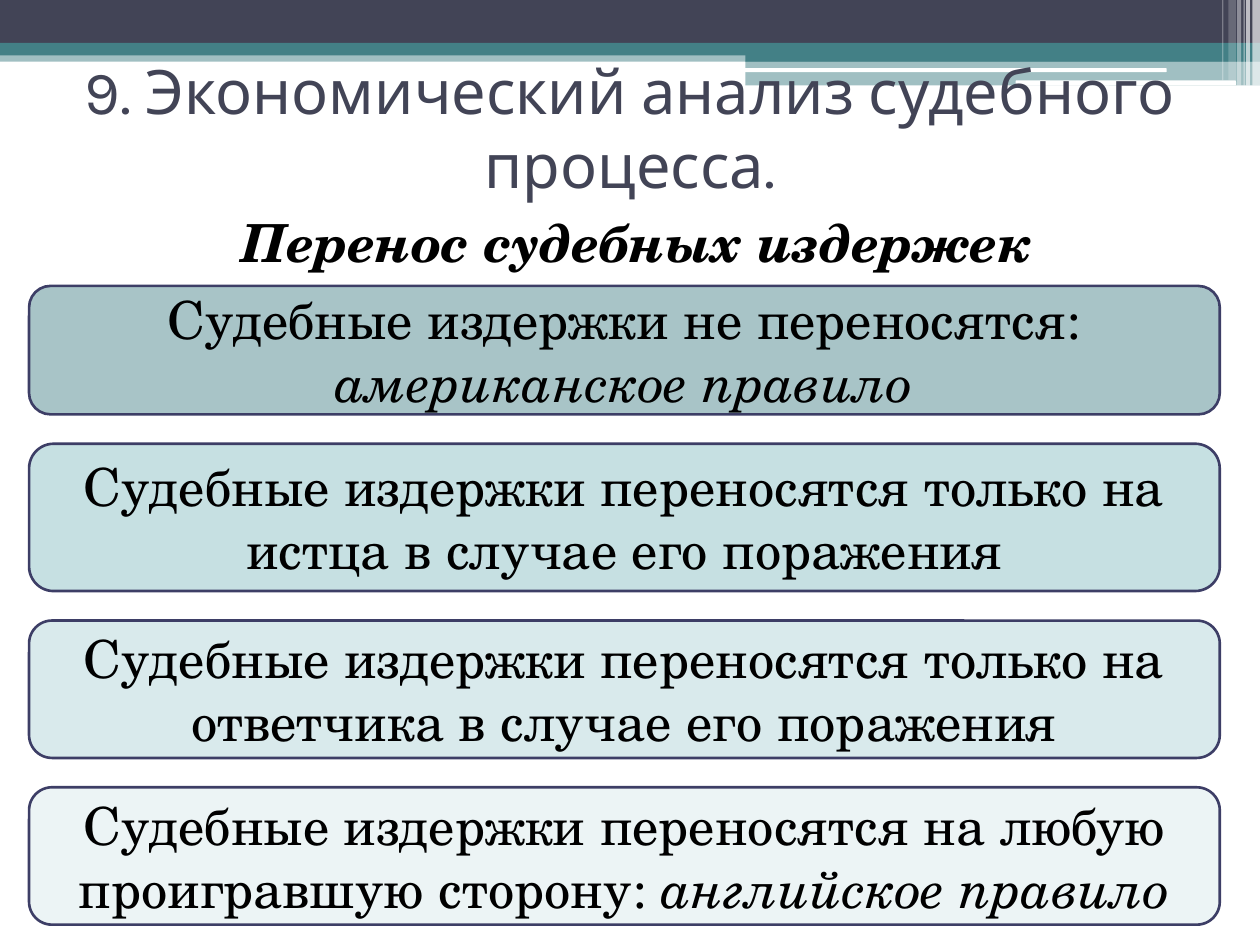
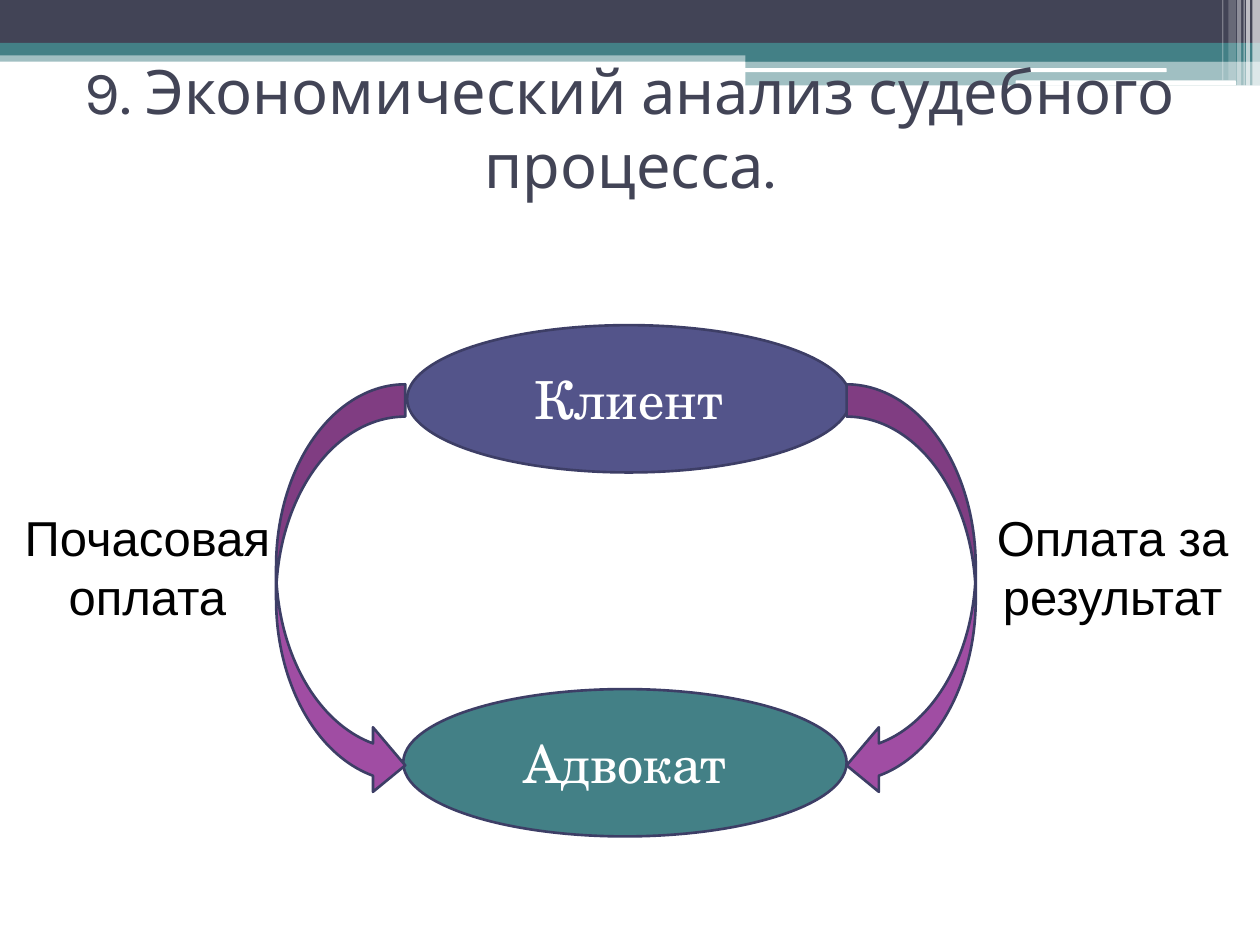
"""Builds two slides on the economic analysis of court proceedings."""
import lxml.etree
import pptx
import pptx.dml.color
import pptx.enum.shapes
import pptx.enum.text
import pptx.oxml.ns
import pptx.util

Pt = pptx.util.Pt
Shape = pptx.enum.shapes.MSO_SHAPE
Anchor = pptx.enum.text.MSO_ANCHOR

WIDTH, HEIGHT = 720, 540
SLATE, TEAL, INDIGO, PURPLE = "424456", "438086", "53548A", "A04DA3"
OUTLINE, WHITE, BLACK = "3D3E66", "FFFFFF", "000000"
SERIF, TITLE_FONT, LABEL_FONT = "TeX Gyre Schola", "Karla", "Arial"

TITLE = "9. Экономический анализ судебного процесса."
SUBTITLE = "Перенос судебных издержек"

BANDS = [
    (Shape.RECTANGLE, 0, 28.8, WIDTH, 6.5, TEAL, 50),
    (Shape.RECTANGLE, 0, 0, WIDTH, 24.5, SLATE, 100),
    (Shape.RECTANGLE, 0, 24.5, WIDTH, 7.2, TEAL, 100),
    (Shape.RECTANGLE, 426, 28, 294, 7.2, TEAL, 100),
    (Shape.RECTANGLE, 426, 34.6, 294, 14.2, TEAL, 50),
    (Shape.ROUNDED_RECTANGLE, 425.5, 39, 241.2, 2.2, WHITE, 100),
    (Shape.ROUNDED_RECTANGLE, 580.3, 46, 126, 2.9, WHITE, 100),
]
STRIPES = [
    (715.7, 4.3, 49, 65),
    (712.1, 2.2, 49, 65),
    (710.6, 0.7, 49, 60),
    (707, 2.2, 49, 40),
    (702, 4.3, 46, 20),
    (698.4, 0.7, 46, 30),
]

RULES = [
    (73.4, TEAL, "Судебные издержки не переносятся: ", "американское правило"),
    (84.2, "83BCC1", "Судебные издержки переносятся только на истца в случае его поражения", ""),
    (78.5, "ADD2D6", "Судебные издержки переносятся только на ответчика в случае его поражения", ""),
    (78.5, "D6E9EA", "Судебные издержки переносятся на любую проигравшую сторону: ", "английское правило"),
]
RULE_LEFT, RULE_TOP, RULE_WIDTH, RULE_GAP = 16.6, 163.4, 680.4, 16.8

PARTIES = [("Клиент", 232.6, 185.8, INDIGO), ("Адвокат", 230.4, 393.8, TEAL)]
PARTY_WIDTH, PARTY_HEIGHT = 253.4, 84.2
ARROWS = [(483.8, False), (157.8, True)]
ARROW_TOP, ARROW_WIDTH, ARROW_HEIGHT = 219.6, 73.8, 236.2
LABEL_TOP, LABEL_WIDTH, LABEL_HEIGHT = 286.6, 168.5, 74.9
LABELS = [("Почасовая оплата", 0), ("Оплата за результат", WIDTH - LABEL_WIDTH)]


def color(value):
    return pptx.dml.color.RGBColor.from_string(value)


def add_box(page, kind, left, top, width, height, fill, opacity=100, outline=None):
    box = page.shapes.add_shape(kind, Pt(left), Pt(top), Pt(width), Pt(height))
    box.shadow.inherit = False
    box.fill.solid()
    box.fill.fore_color.rgb = color(fill)
    if opacity < 100:
        tint = box.element.spPr.find(".//" + pptx.oxml.ns.qn("a:srgbClr"))
        alpha = lxml.etree.SubElement(tint, pptx.oxml.ns.qn("a:alpha"))
        alpha.set("val", str(opacity * 1000))
    if outline:
        box.line.color.rgb = color(outline)
        box.line.width = Pt(1.5)
    else:
        box.line.fill.background()
    return box


def write(box, text, font, size, ink, anchor=Anchor.MIDDLE, italic_tail=""):
    frame = box.text_frame
    frame.word_wrap = True
    frame.vertical_anchor = anchor
    para = frame.paragraphs[0]
    para.alignment = pptx.enum.text.PP_ALIGN.CENTER
    para.font.name = font
    para.font.size = Pt(size)
    para.font.color.rgb = color(ink)
    para.add_run().text = text
    if italic_tail:
        span = para.add_run()
        span.text = italic_tail
        span.font.italic = True
    return para


def add_text(page, left, top, width, height, *style):
    box = page.shapes.add_textbox(Pt(left), Pt(top), Pt(width), Pt(height))
    return write(box, *style)


def add_page(deck):
    page = deck.slides.add_slide(deck.slide_layouts[6])
    for band in BANDS:
        add_box(page, *band)
    for left, width, height, opacity in STRIPES:
        add_box(page, Shape.RECTANGLE, left, 0, width, height, WHITE, opacity)
    return page


def add_title(page):
    add_text(page, 0, 33.8, WIDTH, 77.8, TITLE, TITLE_FONT, 35, SLATE)


def build_rules(deck):
    page = add_page(deck)
    para = add_text(page, 0, 116.6, WIDTH, 417.6, SUBTITLE, SERIF, 30, BLACK, Anchor.TOP)
    para.font.bold = para.font.italic = True
    para.space_before = Pt(3)
    properties = para._p.get_or_add_pPr()
    properties.set("marL", str(Pt(28.8)))
    properties.set("indent", str(Pt(-20.2)))
    top = RULE_TOP
    for height, fill, text, tail in RULES:
        box = add_box(page, Shape.ROUNDED_RECTANGLE, RULE_LEFT, top, RULE_WIDTH, height,
                      fill, 46, OUTLINE)
        write(box, text, SERIF, 30, BLACK, italic_tail=tail)
        top += height + RULE_GAP
    add_title(page)


def build_payment(deck):
    page = add_page(deck)
    for name, left, top, fill in PARTIES:
        box = add_box(page, Shape.OVAL, left, top, PARTY_WIDTH, PARTY_HEIGHT,
                      fill, outline=OUTLINE)
        write(box, name, SERIF, 30, WHITE)
    for left, flipped in ARROWS:
        arrow = add_box(page, Shape.CURVED_LEFT_ARROW, left, ARROW_TOP, ARROW_WIDTH,
                        ARROW_HEIGHT, PURPLE, outline=OUTLINE)
        if flipped:
            arrow.element.spPr.get_or_add_xfrm().set("flipH", "1")
    for text, left in LABELS:
        add_text(page, left, LABEL_TOP, LABEL_WIDTH, LABEL_HEIGHT,
                 text, LABEL_FONT, 28, BLACK, Anchor.TOP)
    add_title(page)


def main():
    deck = pptx.Presentation()
    deck.slide_width, deck.slide_height = Pt(WIDTH), Pt(HEIGHT)
    build_rules(deck)
    build_payment(deck)
    deck.save("out.pptx")


if __name__ == "__main__":
    main()
